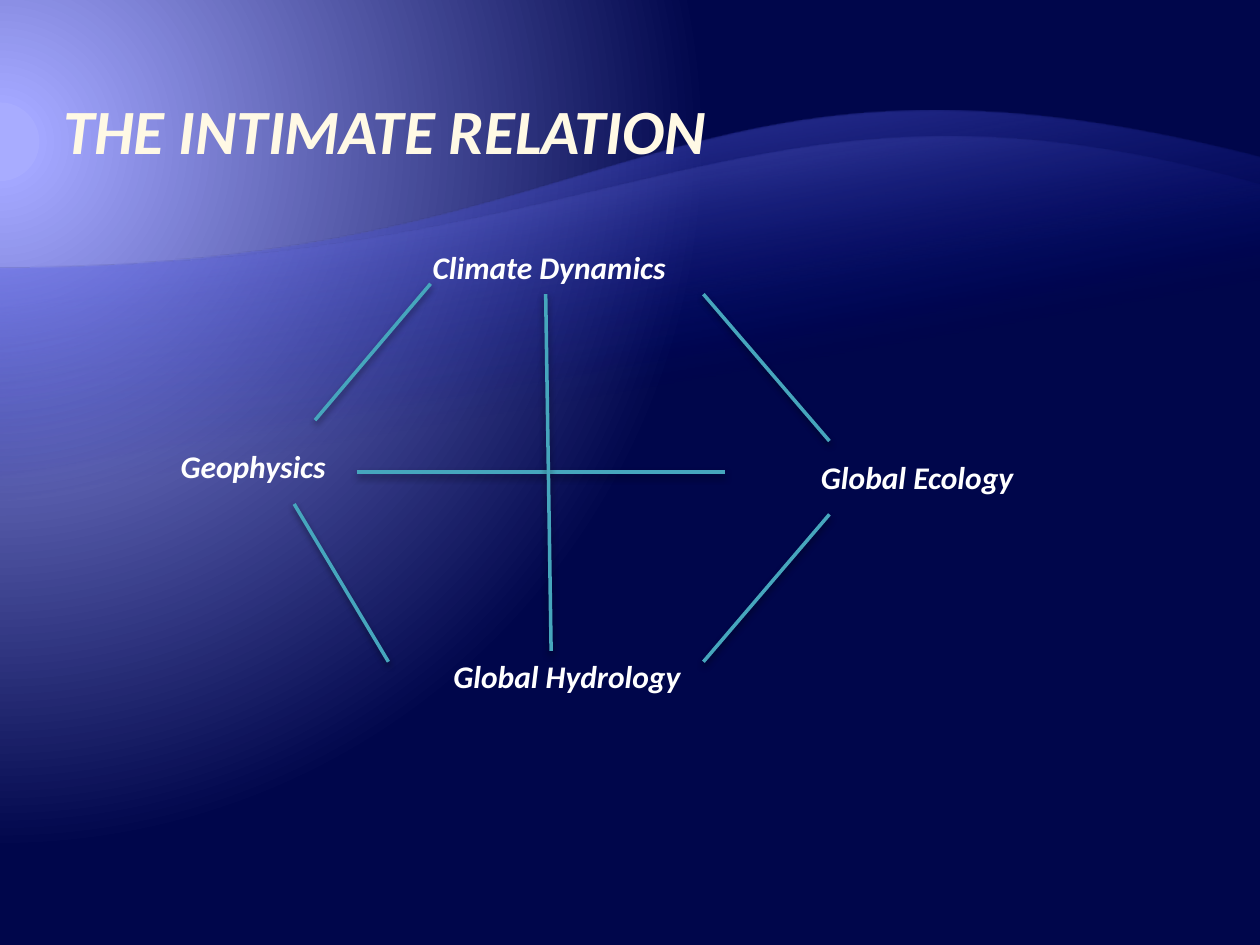
from dataclasses import dataclass

from pptx import Presentation
from pptx import util as u
from pptx.dml.color import RGBColor
from pptx.enum import shapes, text
from pptx.oxml import parse_xml
from pptx.oxml.ns import nsdecls, qn


@dataclass(frozen=True)
class Theme:
    font: str = "Calibri"
    title_size: int = 36
    label_size: int = 18
    title: str = "FFF9E5"
    label: str = "FFFFFF"
    line: str = "46A6BD"
    glow: str = "A8ACFF"
    halo: str = "A3A7FF"
    night: str = "00064B"
    wave: str = "797FFF"
    wave_end: str = "000D9E"


theme = Theme()


def set_gradient(element, stops, direction):
    """Replace the gradient in element; stops are (percent, colour, opacity)."""
    stop_xml = "".join(
        f'<a:gs pos="{position * 1000}"><a:srgbClr val="{color}">'
        f'<a:alpha val="{opacity * 1000}"/></a:srgbClr></a:gs>'
        for position, color, opacity in stops)
    old = element.find(".//" + qn("a:gradFill"))
    new = parse_xml(f'<a:gradFill {nsdecls("a")} rotWithShape="1">'
                    f'<a:gsLst>{stop_xml}</a:gsLst>{direction}</a:gradFill>')
    old.getparent().replace(old, new)


def write(frame, words, size, color):
    frame.text = words
    frame.word_wrap = True
    para = frame.paragraphs[0]
    para.alignment = text.PP_ALIGN.LEFT
    font = para.runs[0].font
    font.name, font.size = theme.font, u.Pt(size)
    font.bold = font.italic = True
    font.color.rgb = RGBColor.from_string(color)


deck = Presentation()
deck.slide_width, deck.slide_height = u.Cm(25.4), u.Cm(19.05)
page = deck.slides.add_slide(deck.slide_layouts[5])

# Background glow from the upper left
page.background.fill.gradient()
set_gradient(
    page.background._cSld,
    [(5, theme.glow, 100), (5, theme.halo, 100), (90, theme.night, 100)],
    '<a:path path="circle"><a:fillToRect l="20000" t="30000" r="135000" b="100000"/></a:path>')

# Waves, drawn upside down and turned: top, height, curve in cm inside the box
waves = [
    (3.18, 15.44, [(25.4, 13.21), (12.7, 13.21), (11.84, 18.49), (0, 15.44)], theme.wave, 55),
    (3.73, 12.45, [(25.4, 10.77), (12.7, 10.77), (10.21, 15.39), (0, 12.45)], theme.halo, 30),
]
for top, height, curve, color, opacity in waves:
    start, first, second, end = [(u.Cm(x), u.Cm(y)) for x, y in curve]
    builder = page.shapes.build_freeform(*start)
    builder.add_line_segments([end, (0, 0), (u.Cm(25.4), 0)], close=True)
    wave = builder.convert_to_shape(0, u.Cm(top))
    # The straight edge between the ends becomes a Bezier curve
    edge = wave._element.find(".//" + qn("a:lnTo"))
    points = "".join(f'<a:pt x="{x}" y="{y}"/>' for x, y in (first, second, end))
    edge.getparent().replace(edge, parse_xml(
        f'<a:cubicBezTo {nsdecls("a")}>{points}</a:cubicBezTo>'))
    wave.top, wave.height = u.Cm(top), u.Cm(height)
    wave.rotation = 180
    wave.shadow.inherit = False
    wave.line.fill.background()
    wave.fill.gradient()
    set_gradient(wave._element, [(65, theme.wave_end, 0), (100, color, opacity)],
                 '<a:lin ang="4800000" scaled="0"/>')

# Title, brought in front of the waves
title = page.shapes.title
page.shapes._spTree.append(title._element)
title.left, title.top, title.width, title.height = map(u.Cm, (1.27, 0.85, 22.86, 2.54))
frame = title.text_frame
frame.margin_left = frame.margin_right = 0
frame.margin_top = frame.margin_bottom = u.Cm(0.03)
frame.vertical_anchor = text.MSO_ANCHOR.BOTTOM
write(frame, "THE INTIMATE RELATION", theme.title_size, theme.title)

# Labels: left, top, width
labels = {
    "Global Hydrology": (8.89, 13.12, 5.29),
    "Climate Dynamics": (8.47, 4.87, 5.5),
    "Global Ecology": (16.3, 9.1, 5.29),
    "Geophysics": (3.39, 8.89, 4.23),
}
for words, place in labels.items():
    box = page.shapes.add_textbox(*map(u.Cm, place), u.Cm(1.06))
    write(box.text_frame, words, theme.label_size, theme.label)
    box.text_frame.auto_size = text.MSO_AUTO_SIZE.SHAPE_TO_FIT_TEXT

# Links between the labels: start x, y, end x, y
links = [
    (7.2, 9.52, 14.61, 9.52),
    (7.83, 13.34, 5.93, 10.16),
    (6.35, 8.47, 8.68, 5.72),
    (14.18, 13.34, 16.72, 10.37),
    (16.72, 8.89, 14.18, 5.93),
    (11.11, 13.12, 11, 5.93),
]
for ends in links:
    link = page.shapes.add_connector(shapes.MSO_CONNECTOR.STRAIGHT, *map(u.Cm, ends))
    link.line.color.rgb = RGBColor.from_string(theme.line)
    link.line.width = u.Pt(2)
    link._element.spPr.append(parse_xml(
        f'<a:effectLst {nsdecls("a")}><a:outerShdw blurRad="{u.Pt(4)}" dist="{u.Pt(2)}" '
        'dir="5400000" rotWithShape="0"><a:srgbClr val="000000"><a:alpha val="43000"/>'
        '</a:srgbClr></a:outerShdw></a:effectLst>'))

deck.save("out.pptx")
